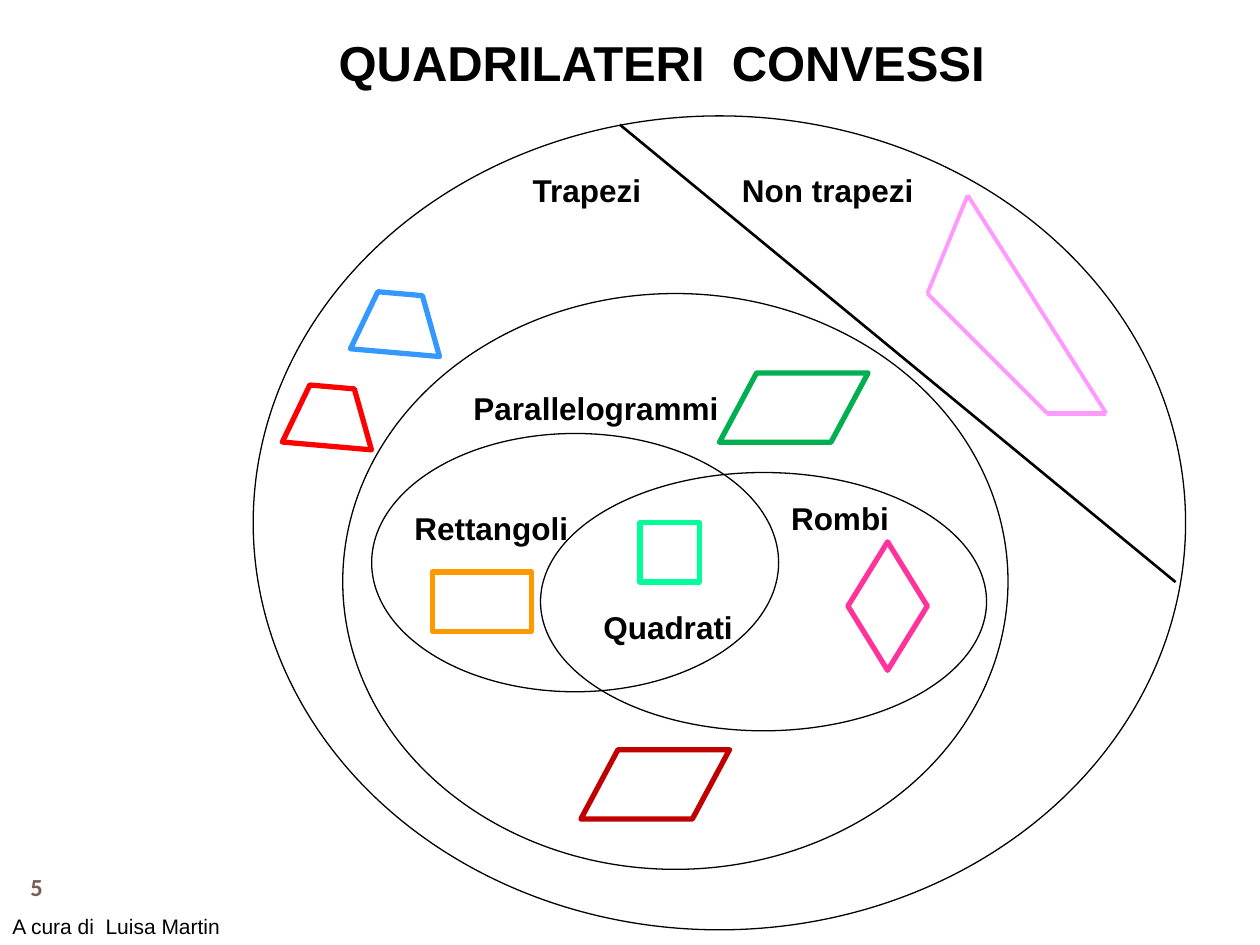
from lxml.etree import SubElement
from pptx import Presentation
from pptx.dml.color import RGBColor
from pptx.enum.shapes import MSO_CONNECTOR, MSO_SHAPE
from pptx.enum.text import MSO_ANCHOR, MSO_AUTO_SIZE, PP_ALIGN
from pptx.oxml.ns import qn
from pptx.util import Inches, Pt

BLACK = RGBColor(0x00, 0x00, 0x00)
BROWN = RGBColor(0x77, 0x5F, 0x55)
LILAC = RGBColor(0xFF, 0x99, 0xFF)
PINK = RGBColor(0xFF, 0x33, 0x99)
ORANGE = RGBColor(0xFF, 0x99, 0x00)
MINT = RGBColor(0x00, 0xFF, 0x99)
GREEN = RGBColor(0x00, 0xB0, 0x50)
MAROON = RGBColor(0xC0, 0x00, 0x00)
BLUE = RGBColor(0x33, 0x99, 0xFF)
RED = RGBColor(0xFF, 0x00, 0x00)

TITLE = " QUADRILATERI  CONVESSI"
SETS = [
    (2.01, 0.92, 7.4, 6.46),
    (2.72, 2.33, 5.28, 4.57),
    (2.95, 3.44, 3.23, 2.05),
    (4.29, 3.75, 3.54, 2.05),
]
SPLIT = ((4.92, 0.99), (9.33, 4.62))
KITE = [(7.68, 1.55), (7.36, 2.33), (8.31, 3.28), (8.78, 3.28)]
KITE_PTS = [2.25, 2.25, 3, 2.25]
LABELS = [
    ("Non trapezi", (5.79, 1.31, 1.57, 0.4)),
    ("Trapezi", (4.13, 1.31, 1.57, 0.4)),
    ("Parallelogrammi", (3.66, 3.04, 2.36, 0.4)),
    ("Rettangoli", (3.19, 3.99, 1.57, 0.4)),
    ("Rombi", (6.18, 3.91, 1.02, 0.4)),
    ("Quadrati", (4.69, 4.78, 1.42, 0.4)),
]
FIGURES = [
    (MSO_SHAPE.DIAMOND, (6.73, 4.3, 0.63, 1.02), PINK),
    (MSO_SHAPE.RECTANGLE, (3.43, 4.54, 0.79, 0.47), ORANGE),
    (MSO_SHAPE.RECTANGLE, (5.08, 4.15, 0.47, 0.47), MINT),
    (MSO_SHAPE.PARALLELOGRAM, (5.71, 2.96, 1.18, 0.55), GREEN),
    (MSO_SHAPE.PARALLELOGRAM, (4.61, 5.95, 1.18, 0.55), MAROON),
]
TRAPEZES = [((2.8, 2.33), BLUE), ((2.26, 3.07), RED)]
WIDE, HIGH, TILT = 0.71, 0.47, 185

deck = Presentation()
deck.slide_width, deck.slide_height = Inches(10), Inches(7.5)
slide = deck.slides.add_slide(deck.slide_layouts[5])
shapes = slide.shapes


def outline(shape, color, width):
    shape.shadow.inherit = False
    shape.fill.background()
    shape.line.color.rgb = color
    shape.line.width = Pt(width)


def draw(kind, box, color=BLACK, width=3):
    shape = shapes.add_shape(kind, *map(Inches, box))
    outline(shape, color, width)
    return shape


def join(start, end, color, width):
    line = shapes.add_connector(MSO_CONNECTOR.STRAIGHT, *map(Inches, start + end))
    line.line.color.rgb = color
    line.line.width = Pt(width)
    SubElement(line._element.spPr, qn("a:effectLst"))


def write(text, box, shape=None, size=18, bold=True, font="Arial",
          color=BLACK, align=PP_ALIGN.LEFT, anchor=MSO_ANCHOR.TOP):
    place = [Inches(n) for n in box]
    shape = shape or shapes.add_textbox(*place)
    shape.left, shape.top, shape.width, shape.height = place
    frame = shape.text_frame
    frame.word_wrap = True
    frame.auto_size = MSO_AUTO_SIZE.NONE
    frame.vertical_anchor = anchor
    para = frame.paragraphs[0]
    para.alignment = align
    run = para.add_run()
    run.text = text
    run.font.size, run.font.bold, run.font.name = Pt(size), bold, font
    run.font.color.rgb = color


write(TITLE, (2.48, 0.21, 5.67, 0.57), shape=shapes.title, size=28,
      align=PP_ALIGN.JUSTIFY)

for box in SETS:
    draw(MSO_SHAPE.OVAL, box, width=0.75)

join(*SPLIT, BLACK, 1.5)
for start, end, width in zip(KITE, KITE[1:] + KITE[:1], KITE_PTS):
    join(start, end, LILAC, width)

for kind, box, color in FIGURES:
    shape = draw(kind, box, color)
    if kind == MSO_SHAPE.PARALLELOGRAM:
        shape.adjustments[0] = 0.536

for (left, top), color in TRAPEZES:
    pen = shapes.build_freeform(Inches(left), Inches(top))
    corners = [(0.25, 1), (0.75, 1), (1, 0)]
    pen.add_line_segments([(Inches(left + x * WIDE), Inches(top + y * HIGH))
                           for x, y in corners], close=True)
    shape = pen.convert_to_shape()
    shape.rotation = TILT
    outline(shape, color, 3)

for text, box in LABELS:
    write(text, box)

write("5", (0, 6.83, 0.58, 0.42), size=14, font="Calibri", color=BROWN,
      align=PP_ALIGN.CENTER, anchor=MSO_ANCHOR.MIDDLE)
write("A cura di  Luisa Martin", (0, 7.2, 1.89, 0.3), size=12, bold=False)

deck.save("out.pptx")
